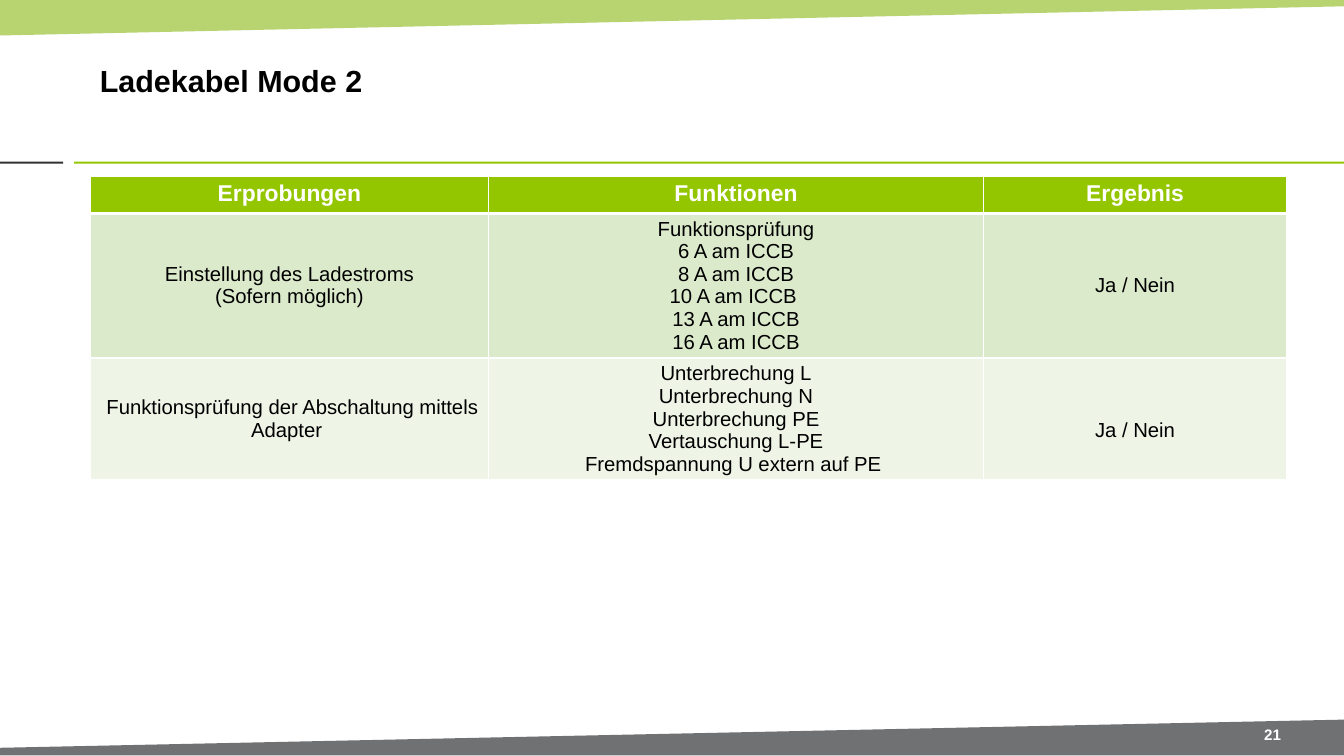
from lxml import etree
from pptx import Presentation
from pptx import util as u
from pptx.dml.color import RGBColor
from pptx.enum import shapes, text
from pptx.oxml import ns

WHITE = RGBColor(0xFF, 0xFF, 0xFF)
BLACK = RGBColor(0x00, 0x00, 0x00)
GREEN = RGBColor(0x94, 0xC6, 0x00)
LEAF = RGBColor(0x95, 0xC0, 0x2A)
CHARCOAL = RGBColor(0x31, 0x31, 0x30)
GREY = RGBColor(0x70, 0x71, 0x73)
ROW_DARK = RGBColor(0xDC, 0xEA, 0xCC)
ROW_LIGHT = RGBColor(0xEE, 0xF5, 0xE7)

WIDTH, HEIGHT = 1058.4, 595.44
LEFT, CENTER = text.PP_ALIGN.LEFT, text.PP_ALIGN.CENTER
TOP, MIDDLE = text.MSO_ANCHOR.TOP, text.MSO_ANCHOR.MIDDLE

TITLE = {"size": u.Pt(24), "bold": True, "color": BLACK}
NUMBER = {"size": u.Pt(12), "bold": True, "color": WHITE}
HEADER = {"size": u.Pt(18), "bold": True, "color": WHITE}
BODY = {"size": u.Pt(16), "bold": False, "color": BLACK}

COLUMNS = [313.9, 389.5, 239.1]
ROWS = [
    (29, HEADER, GREEN, TOP, [["Erprobungen"], ["Funktionen"], ["Ergebnis"]]),
    (114, BODY, ROW_DARK, MIDDLE, [
        ["Einstellung des Ladestroms", "(Sofern möglich)"],
        ["Funktionsprüfung", "6 A am ICCB", "8 A am ICCB",
         "10 A am ICCB ", "13 A am ICCB", "16 A am ICCB"],
        ["Ja / Nein"]]),
    (95.5, BODY, ROW_LIGHT, MIDDLE, [
        [" Funktionsprüfung der Abschaltung mittels Adapter "],
        ["Unterbrechung L", "Unterbrechung N", "Unterbrechung PE",
         "Vertauschung L-PE", "Fremdspannung U extern auf PE "],
        ["Ja / Nein"]]),
]


class SlideBuilder:
    font_name = "Arial"

    def __init__(self, slide):
        self.slide = slide

    def put_lines(self, frame, lines, style, align):
        for index, line in enumerate(lines):
            paragraph = frame.paragraphs[0] if index == 0 else frame.add_paragraph()
            paragraph.alignment = align
            run = paragraph.add_run()
            run.text = line
            run.font.name = self.font_name
            for key, value in style.items():
                if key == "color":
                    run.font.color.rgb = value
                else:
                    setattr(run.font, key, value)

    def fit(self, frame):
        layout = {"word_wrap": True, "auto_size": text.MSO_AUTO_SIZE.NONE,
                  "vertical_anchor": MIDDLE,
                  "margin_left": u.Pt(8), "margin_right": u.Pt(8),
                  "margin_top": u.Pt(4), "margin_bottom": u.Pt(4)}
        for key, value in layout.items():
            setattr(frame, key, value)

    def paint(self, shape, color):
        shape.shadow.inherit = False
        shape.fill.solid()
        shape.fill.fore_color.rgb = color
        shape.line.fill.background()

    def band(self, corners, color, opacity=100):
        points = [(u.Pt(x), u.Pt(y)) for x, y in corners]
        builder = self.slide.shapes.build_freeform(*points[0])
        builder.add_line_segments(points[1:], close=True)
        wedge = builder.convert_to_shape()
        self.paint(wedge, color)
        if opacity < 100:
            tint = wedge.element.spPr.find(".//" + ns.qn("a:srgbClr"))
            etree.SubElement(tint, ns.qn("a:alpha"), val=str(opacity * 1000))

    def rule(self, left, top, width, height, color):
        bar = self.slide.shapes.add_shape(
            shapes.MSO_SHAPE.RECTANGLE, u.Pt(left), u.Pt(top), u.Pt(width), u.Pt(height))
        self.paint(bar, color)

    def title(self, wording, left, top, width, height):
        heading = self.slide.shapes.title
        place = {"left": left, "top": top, "width": width, "height": height}
        for key, value in place.items():
            setattr(heading, key, u.Pt(value))
        self.fit(heading.text_frame)
        self.put_lines(heading.text_frame, [wording], TITLE, LEFT)

    def label(self, wording, left, top, width, height, style):
        box = self.slide.shapes.add_textbox(
            u.Pt(left), u.Pt(top), u.Pt(width), u.Pt(height))
        self.fit(box.text_frame)
        self.put_lines(box.text_frame, [wording], style, CENTER)

    def borders(self, cell, weights):
        properties = cell._tc.get_or_add_tcPr()
        for side, weight in weights.items():
            edge = etree.SubElement(properties, ns.qn("a:ln" + side), w=str(u.Pt(weight)))
            fill = etree.SubElement(edge, ns.qn("a:solidFill"))
            etree.SubElement(fill, ns.qn("a:srgbClr"), val=str(WHITE))

    def table(self, left, top, columns, rows):
        grid = self.slide.shapes.add_table(
            len(rows), len(columns), u.Pt(left), u.Pt(top),
            u.Pt(sum(columns)), u.Pt(sum(row[0] for row in rows))).table
        for column, width in zip(grid.columns, columns):
            column.width = u.Pt(width)
        for r, (height, style, color, anchor, entries) in enumerate(rows):
            grid.rows[r].height = u.Pt(height)
            weights = {"L": 1, "R": 1, "T": 3 if r == 1 else 1, "B": 3 if r == 0 else 1}
            for c, lines in enumerate(entries):
                cell = grid.cell(r, c)
                self.borders(cell, weights)
                cell.fill.solid()
                cell.fill.fore_color.rgb = color
                cell.vertical_anchor = anchor
                self.put_lines(cell.text_frame, lines, style, CENTER)
        return grid


def main():
    deck = Presentation()
    deck.slide_width, deck.slide_height = u.Pt(WIDTH), u.Pt(HEIGHT)
    page = SlideBuilder(deck.slides.add_slide(deck.slide_layouts[5]))
    page.band([(0, 0), (WIDTH, 0), (WIDTH, 5), (0, 28)], LEAF, 67)
    page.rule(0, 127.3, 49.7, 1.7, CHARCOAL)
    page.rule(58.3, 127.3, WIDTH - 58.3, 1.7, GREEN)
    page.band([(WIDTH, HEIGHT - 0.5), (0, HEIGHT - 0.5), (0, 589), (WIDTH, 566.8)], GREY)
    page.title("Ladekabel Mode 2", 70.6, 20.2, 830.9, 85.7)
    page.label("21", 971.3, 568.1, 61.9, 20.9, NUMBER)
    results = page.table(71, 139, COLUMNS, ROWS)
    results.cell(2, 2).margin_top = u.Pt(22)
    deck.save("out.pptx")


if __name__ == "__main__":
    main()
